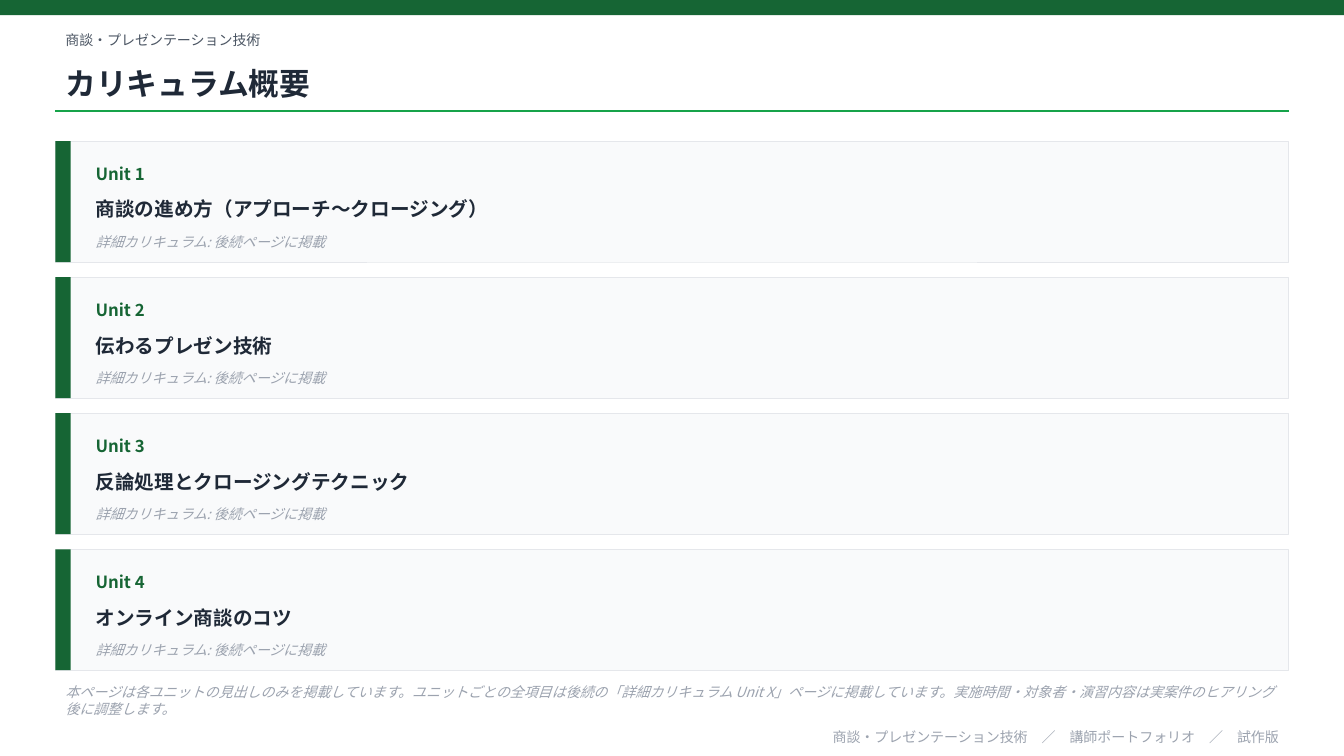
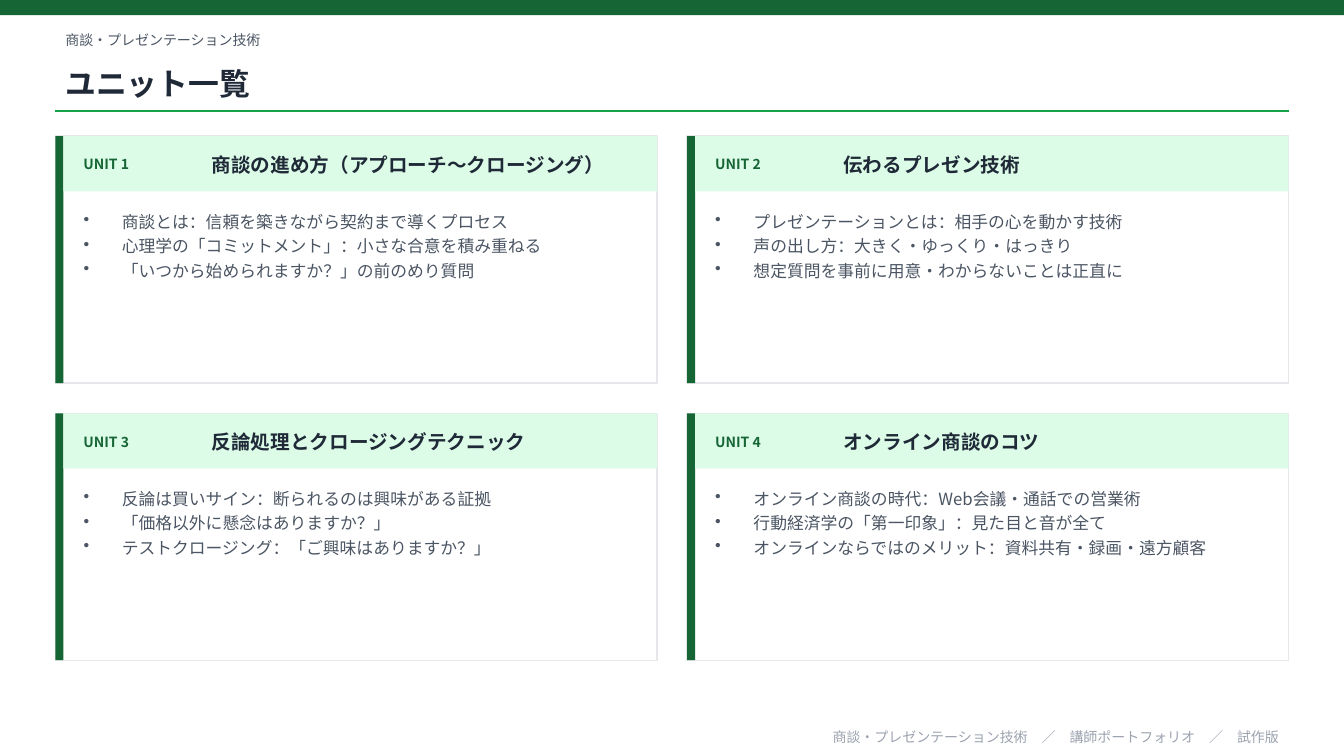
from lxml import etree
from pptx import Presentation
from pptx.dml.color import RGBColor
from pptx.enum.shapes import MSO_CONNECTOR, MSO_SHAPE
from pptx.enum.text import MSO_ANCHOR, PP_ALIGN
from pptx.oxml.ns import qn
from pptx.util import Inches, Pt

RECT, LINE = MSO_SHAPE.RECTANGLE, MSO_CONNECTOR.STRAIGHT
TOP, MID = MSO_ANCHOR.TOP, MSO_ANCHOR.MIDDLE
LEFT, RIGHT = PP_ALIGN.LEFT, PP_ALIGN.RIGHT

COURSE = "商談・プレゼンテーション技術"
FOOTER = COURSE + "　／　講師ポートフォリオ　／　試作版"
DETAIL = "詳細カリキュラム: 後続ページに掲載"
NOTE = (
    "本ページは各ユニットの見出しのみを掲載しています。"
    "ユニットごとの全項目は後続の「詳細カリキュラム Unit X」ページに掲載しています。"
    "実施時間・対象者・演習内容は実案件のヒアリング後に調整します。"
)
UNITS = [
    ("商談の進め方（アプローチ～クロージング）", [
        "商談とは：信頼を築きながら契約まで導くプロセス",
        "心理学の「コミットメント」：小さな合意を積み重ねる",
        "「いつから始められますか？」の前のめり質問",
    ]),
    ("伝わるプレゼン技術", [
        "プレゼンテーションとは：相手の心を動かす技術",
        "声の出し方：大きく・ゆっくり・はっきり",
        "想定質問を事前に用意・わからないことは正直に",
    ]),
    ("反論処理とクロージングテクニック", [
        "反論は買いサイン：断られるのは興味がある証拠",
        "「価格以外に懸念はありますか？」",
        "テストクロージング：「ご興味はありますか？」",
    ]),
    ("オンライン商談のコツ", [
        "オンライン商談の時代：Web会議・通話での営業術",
        "行動経済学の「第一印象」：見た目と音が全て",
        "オンラインならではのメリット：資料共有・録画・遠方顧客",
    ]),
]

FONT = "Noto Sans CJK JP"
GREEN, RULE, MINT = "166534", "16A34A", "DCFCE7"
INK, SLATE, GRAY = "1F2937", "4B5563", "9CA3AF"
EDGE, PALE, WHITE = "E5E7EB", "F9FAFB", "FFFFFF"

STYLES = {
    "course": {"size": Pt(10), "color": SLATE},
    "title": {"size": Pt(22), "color": INK, "bold": True},
    "unit": {"size": Pt(12), "color": GREEN, "bold": True},
    "tag": {"size": Pt(10), "color": GREEN, "bold": True},
    "head": {"size": Pt(14), "color": INK, "bold": True},
    "note": {"size": Pt(10), "color": GRAY, "italic": True},
    "list": {"size": Pt(12), "color": SLATE},
    "footer": {"size": Pt(10), "color": GRAY},
}

WIDTH, HEIGHT = 13.33, 7.5
EDGE_X = 0.55
BODY = WIDTH - 2 * EDGE_X


def rgb(code):
    return RGBColor.from_string(code)


def box(slide, x, y, w, h, fill, line=None, weight=1):
    shape = slide.shapes.add_shape(RECT, Inches(x), Inches(y), Inches(w), Inches(h))
    shape.shadow.inherit = False
    shape.fill.solid()
    shape.fill.fore_color.rgb = rgb(fill)
    if line:
        shape.line.color.rgb = rgb(line)
        shape.line.width = Pt(weight)
    else:
        shape.line.fill.background()


def rule(slide, x, y, w):
    line = slide.shapes.add_connector(LINE, Inches(x), Inches(y), Inches(x + w), Inches(y))
    line.line.color.rgb = rgb(RULE)
    line.line.width = Pt(1)
    etree.SubElement(line._element.spPr, qn("a:effectLst"))


def style(run, name):
    """Apply a named style, with the font set for Latin and Japanese."""
    font = run.font
    font.name = FONT
    for key, value in STYLES[name].items():
        if key == "color":
            font.color.rgb = rgb(value)
        else:
            setattr(font, key, value)
    etree.SubElement(run._r.get_or_add_rPr(), qn("a:ea"), typeface=FONT)


def bullet(para):
    props = para._p.get_or_add_pPr()
    props.set("marL", str(Inches(0.38)))
    props.set("indent", str(-Inches(0.38)))
    etree.SubElement(props, qn("a:buChar"), char="•")
    para.space_after = Pt(3)


def text(slide, x, y, w, h, lines, name, align=LEFT, anchor=MID, dots=False):
    area = slide.shapes.add_textbox(Inches(x), Inches(y), Inches(w), Inches(h))
    frame = area.text_frame
    frame.word_wrap = True
    frame.vertical_anchor = anchor
    for i, line in enumerate(lines):
        para = frame.add_paragraph() if i else frame.paragraphs[0]
        if dots:
            bullet(para)
        para.alignment = align
        run = para.add_run()
        run.text = line
        style(run, name)


def page(deck, title):
    """Add a slide with the shared band, title, rule and footer."""
    slide = deck.slides.add_slide(deck.slide_layouts[6])
    box(slide, 0, 0, WIDTH, 0.15, GREEN)
    text(slide, EDGE_X, 0.25, BODY, 0.3, [COURSE], "course")
    text(slide, EDGE_X, 0.55, BODY, 0.55, [title], "title")
    rule(slide, EDGE_X, 1.1, BODY)
    text(slide, EDGE_X, 7.2, BODY, 0.22, [FOOTER], "footer", RIGHT)
    return slide


def outline(deck):
    slide = page(deck, "カリキュラム概要")
    high, gap = 1.2, 0.15
    x, w = EDGE_X + 0.3, BODY - 0.5
    for i, (head, _) in enumerate(UNITS):
        y = 1.4 + i * (high + gap)
        box(slide, EDGE_X, y, BODY, high, PALE, EDGE, 0.5)
        box(slide, EDGE_X, y, 0.15, high, GREEN)
        text(slide, x, y + 0.12, 1.5, 0.4, [f"Unit {i + 1}"], "unit")
        text(slide, x, y + 0.45, w, 0.45, [head], "head")
        text(slide, x, y + 0.85, w, 0.3, [DETAIL], "note")
    text(slide, EDGE_X, 6.75, BODY, 0.4, [NOTE], "note")


def grid(deck):
    slide = page(deck, "ユニット一覧")
    gap, high, bar = 0.3, 2.45, 0.08
    wide = (BODY - gap) / 2
    for i, (head, points) in enumerate(UNITS):
        row, col = divmod(i, 2)
        x = EDGE_X + col * (wide + gap)
        y = 1.35 + row * (high + gap)
        box(slide, x, y, wide, high, WHITE, EDGE)
        box(slide, x, y, bar, high, GREEN)
        box(slide, x + bar, y, wide - bar, 0.55, MINT)
        text(slide, x + 0.18, y + 0.08, 1.2, 0.4, [f"UNIT {i + 1}"], "tag")
        text(slide, x + 1.45, y + 0.08, wide - 1.6, 0.4, [head], "head")
        text(slide, x + 0.18, y + 0.7, wide - 0.36, 1.6, points, "list",
             anchor=TOP, dots=True)


def main():
    deck = Presentation()
    deck.slide_width, deck.slide_height = Inches(WIDTH), Inches(HEIGHT)
    outline(deck)
    grid(deck)
    deck.save("out.pptx")


if __name__ == "__main__":
    main()
